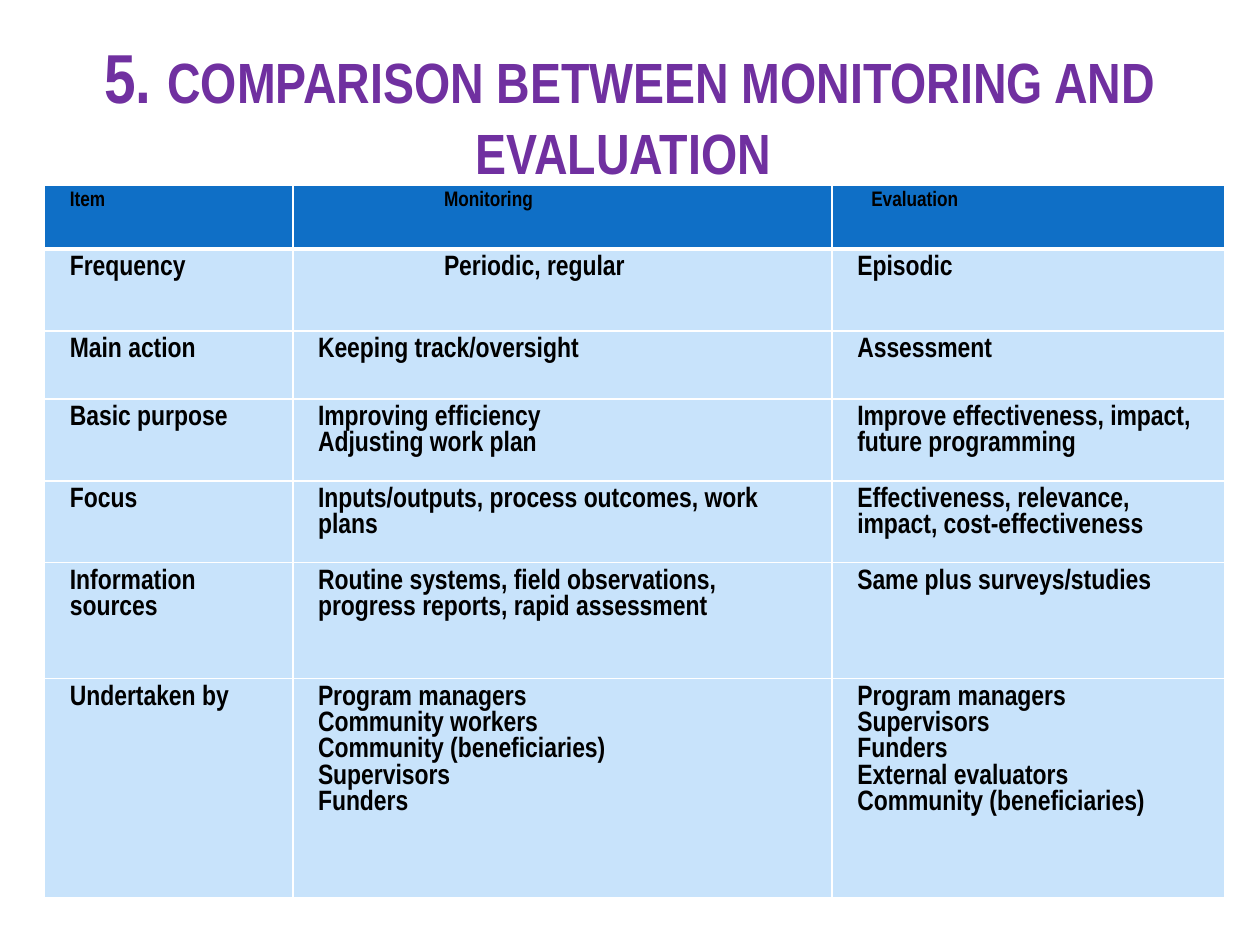
from lxml import etree
from pptx import Presentation
from pptx.dml.color import RGBColor
from pptx.enum.text import MSO_ANCHOR, PP_ALIGN
from pptx.oxml.ns import qn
from pptx.util import Pt

COLORS = {"title": "7030A0", "header": "0F6FC6", "body": "C8E3FB",
          "text": "000000", "border": "FFFFFF"}
COLUMN_WIDTHS = [141.84, 308.16, 224.64]
ROW_HEIGHTS = [36.72, 46.8, 38.88, 46.8, 46.8, 66.24, 125.28]
ROWS = [
    ["Item", "Monitoring", "Evaluation"],
    ["Frequency", "Periodic, regular", "Episodic"],
    ["Main action", "Keeping track/oversight", "Assessment"],
    ["Basic purpose", "Improving efficiency\nAdjusting work plan",
     "Improve effectiveness, impact, future programming"],
    ["Focus", "Inputs/outputs, process outcomes, work plans",
     "Effectiveness, relevance, impact, cost-effectiveness"],
    ["Information sources",
     "Routine systems, field observations, progress reports, rapid assessment",
     "Same plus surveys/studies"],
    ["Undertaken by",
     "Program managers\nCommunity workers\nCommunity (beneficiaries)\nSupervisors\nFunders",
     "Program managers\nSupervisors\nFunders\nExternal evaluators\nCommunity (beneficiaries)"],
]
# Extra left indent of single cells, keyed by row and column
INDENTS = {(0, 1): 72, (1, 1): 72, (0, 2): 8}


def style_font(font, size, color):
    font.name = "Arial Narrow"
    font.size = Pt(size)
    font.bold = True
    font.color.rgb = RGBColor.from_string(COLORS[color])


def add_border(cell, side, width):
    """Draw one cell edge; side is L, R, T or B. Call before setting the fill."""
    line = etree.SubElement(cell._tc.get_or_add_tcPr(), qn(f"a:ln{side}"), w=str(Pt(width)))
    fill = etree.SubElement(line, qn("a:solidFill"))
    etree.SubElement(fill, qn("a:srgbClr"), val=COLORS["border"])


presentation = Presentation()
presentation.slide_width, presentation.slide_height = Pt(720), Pt(540)
slide = presentation.slides.add_slide(presentation.slide_layouts[6])

# Title
title = slide.shapes.add_textbox(Pt(36), Pt(15), Pt(648), Pt(96))
title.text_frame.word_wrap = True
title.text_frame.vertical_anchor = MSO_ANCHOR.MIDDLE
paragraph = title.text_frame.paragraphs[0]
paragraph.alignment = PP_ALIGN.CENTER
for text, size in [("5. ", 39.6), ("COMPARISON BETWEEN MONITORING AND EVALUATION ", 32.4)]:
    run = paragraph.add_run()
    run.text = text
    style_font(run.font, size, "title")

# Comparison table
table = slide.shapes.add_table(len(ROWS), len(COLUMN_WIDTHS), Pt(25.5), Pt(105.6),
                               Pt(sum(COLUMN_WIDTHS)), Pt(sum(ROW_HEIGHTS))).table
for column, width in zip(table.columns, COLUMN_WIDTHS):
    column.width = Pt(width)
for row, height in zip(table.rows, ROW_HEIGHTS):
    row.height = Pt(height)

for row_index, texts in enumerate(ROWS):
    is_header = row_index == 0
    for column_index, text in enumerate(texts):
        cell = table.cell(row_index, column_index)
        for side in "LRTB":
            thick = (is_header and side == "B") or (row_index == 1 and side == "T")
            add_border(cell, side, 3 if thick else 1)
        cell.fill.solid()
        cell.fill.fore_color.rgb = RGBColor.from_string(COLORS["header" if is_header else "body"])
        cell.margin_left = Pt(14.4 + INDENTS.get((row_index, column_index), 0))
        cell.margin_right = Pt(14.4)
        cell.margin_top = cell.margin_bottom = Pt(3.6)
        cell.text_frame.text = text
        for paragraph in cell.text_frame.paragraphs:
            for run in paragraph.runs:
                style_font(run.font, 12 if is_header else 16, "text")

presentation.save("out.pptx")
